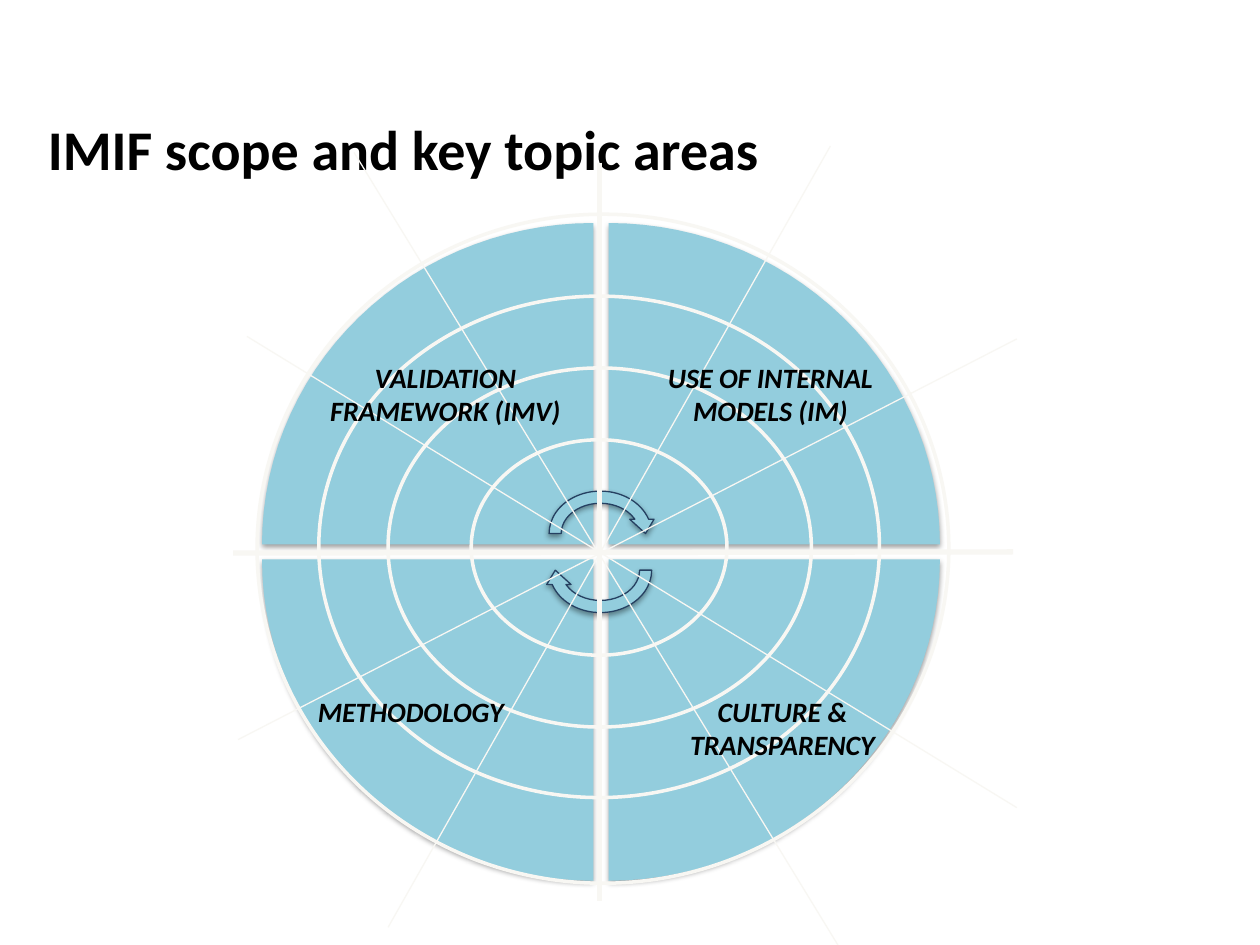
import math

import pptx
import pptx.util
from lxml import etree
from pptx.dml.color import RGBColor
from pptx.enum.shapes import MSO_CONNECTOR, MSO_SHAPE
from pptx.enum.text import MSO_ANCHOR, MSO_AUTO_SIZE, PP_ALIGN
from pptx.oxml import parse_xml
from pptx.oxml.ns import nsdecls, qn

Inches, Pt = pptx.util.Inches, pptx.util.Pt

BLACK = RGBColor(0x00, 0x00, 0x00)
AQUA = RGBColor(0x93, 0xCD, 0xDD)
NAVY = RGBColor(0x25, 0x40, 0x61)
IVORY = RGBColor(0xF8, 0xF7, 0xF3)

TITLE = "IMIF scope and key topic areas"
CENTER = (4.77, 4.38)
GAP = 0.06
RADII = (2.63, 2.55)
ARC_STEPS = 30
QUADRANTS = [(-1, -1), (1, -1), (1, 1), (-1, 1)]
CYCLE_ARROWS = [(3.85, 0), (4.14, 180)]
RINGS = [
    (3.74, 3.49, 2.03, 1.71),
    (3.08, 2.92, 3.36, 2.85),
    (2.53, 2.35, 4.45, 3.98),
    (2.04, 1.70, 5.49, 5.31),
]
SPOKES = [
    (1.85, 4.39, 8.04, 4.38, 3),
    (4.76, 1.29, 4.76, 7.15, 3),
    (1.96, 2.67, 8.07, 6.41, 0.75),
    (2.81, 1.21, 6.65, 7.50, 0.75),
    (8.07, 2.69, 1.89, 5.87, 0.75),
    (6.59, 1.16, 3.08, 7.36, 0.75),
]
TOPICS = [
    ("VALIDATION FRAMEWORK (IMV)", 2.32, 2.81, 2.43, 0.64),
    ("USE OF INTERNAL MODELS (IM)", 4.90, 2.81, 2.43, 0.64),
    ("METHODOLOGY", 1.77, 5.46, 2.98, 0.37),
    ("CULTURE & TRANSPARENCY", 4.90, 5.46, 2.62, 0.64),
]
SHADOW = (
    f'<a:effectLst {nsdecls("a")}><a:outerShdw blurRad="40000" dist="20000" '
    'dir="5400000" rotWithShape="0"><a:srgbClr val="000000">'
    '<a:alpha val="38000"/></a:srgbClr></a:outerShdw></a:effectLst>'
)


def fill_with_shadow(sp):
    sp.fill.solid()
    sp.fill.fore_color.rgb = AQUA
    sp.line.fill.background()
    sp._element.spPr.append(parse_xml(SHADOW))


def set_line(sp, color, width):
    sp.line.color.rgb = color
    sp.line.width = Pt(width)


def set_font(p, size, italic=False):
    p.font.name = "Calibri"
    p.font.size = Pt(size)
    p.font.bold = True
    p.font.italic = italic
    p.font.color.rgb = BLACK


def add_quadrant(shapes, dx, dy):
    x, y = CENTER[0] + dx * GAP, CENTER[1] + dy * GAP
    angles = [math.pi / 2 * i / ARC_STEPS for i in range(ARC_STEPS + 1)]
    arc = [
        (Inches(x + dx * RADII[0] * math.cos(a)), Inches(y + dy * RADII[1] * math.sin(a)))
        for a in angles
    ]
    builder = shapes.build_freeform(Inches(x), Inches(y))
    builder.add_line_segments(arc, close=True)
    fill_with_shadow(builder.convert_to_shape())


prs = pptx.Presentation()
prs.slide_width, prs.slide_height = Inches(10), Inches(7.5)
s = prs.slides.add_slide(prs.slide_layouts[5])

title = s.shapes.title
title.left, title.top = Inches(0.28), Inches(0.92)
title.width, title.height = Inches(9.14), Inches(0.78)
tf = title.text_frame
tf.text = TITLE
tf.vertical_anchor = MSO_ANCHOR.TOP
tf.auto_size = MSO_AUTO_SIZE.NONE
p = tf.paragraphs[0]
p.alignment = PP_ALIGN.LEFT
p.line_spacing = 0.9
set_font(p, 32)

wheel = s.shapes.add_group_shape().shapes

for dx, dy in QUADRANTS:
    add_quadrant(wheel, dx, dy)

for top, rotation in CYCLE_ARROWS:
    sp = wheel.add_shape(
        MSO_SHAPE.CIRCULAR_ARROW, Inches(4.31), Inches(top), Inches(0.91), Inches(0.77)
    )
    sp.rotation = rotation
    fill_with_shadow(sp)
    set_line(sp, NAVY, 0.75)

for ring in RINGS:
    sp = wheel.add_shape(MSO_SHAPE.OVAL, *map(Inches, ring))
    sp.shadow.inherit = False
    sp.fill.background()
    set_line(sp, IVORY, 2)

for *ends, width in SPOKES:
    sp = wheel.add_connector(MSO_CONNECTOR.STRAIGHT, *map(Inches, ends))
    set_line(sp, IVORY, width)
    etree.SubElement(sp._element.spPr, qn("a:effectLst"))

for text, *box in TOPICS:
    tf = wheel.add_textbox(*map(Inches, box)).text_frame
    tf.word_wrap = True
    tf.auto_size = MSO_AUTO_SIZE.SHAPE_TO_FIT_TEXT
    tf.text = text
    p = tf.paragraphs[0]
    p.alignment = PP_ALIGN.CENTER
    set_font(p, 16, italic=True)

prs.save("out.pptx")
